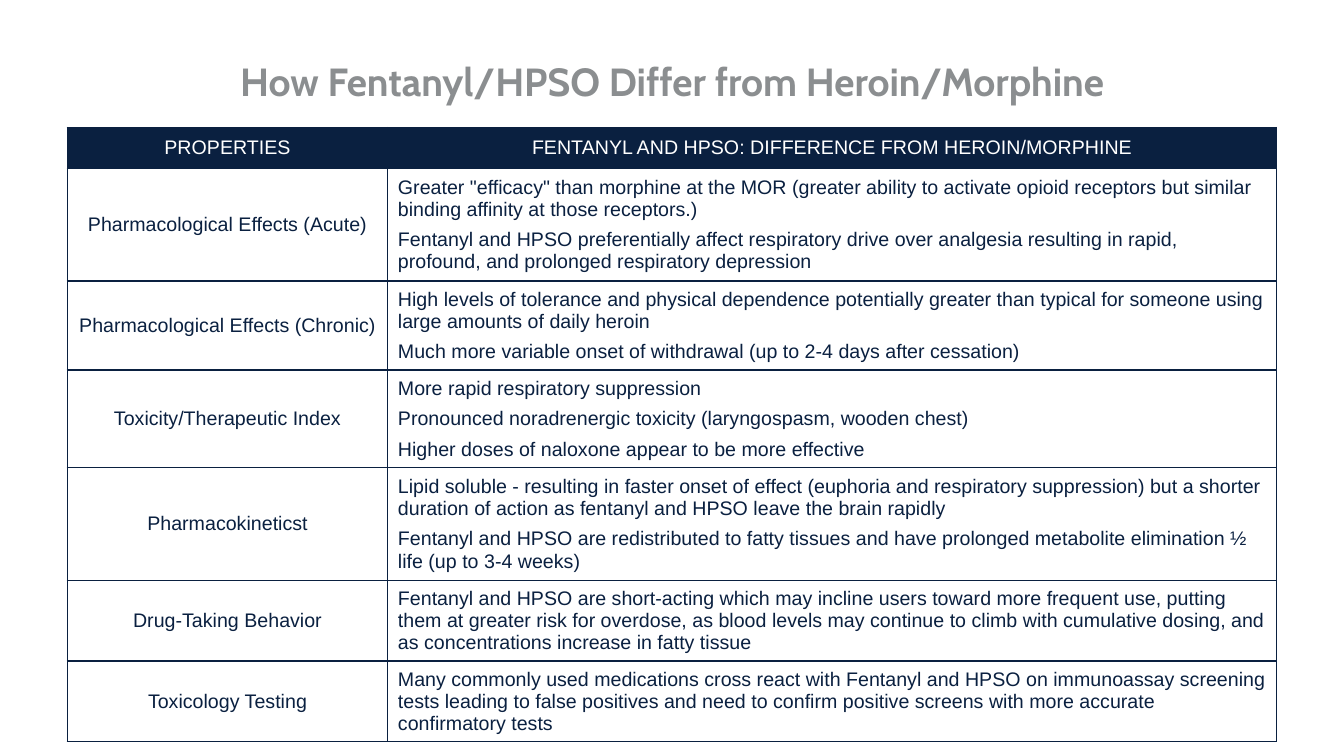
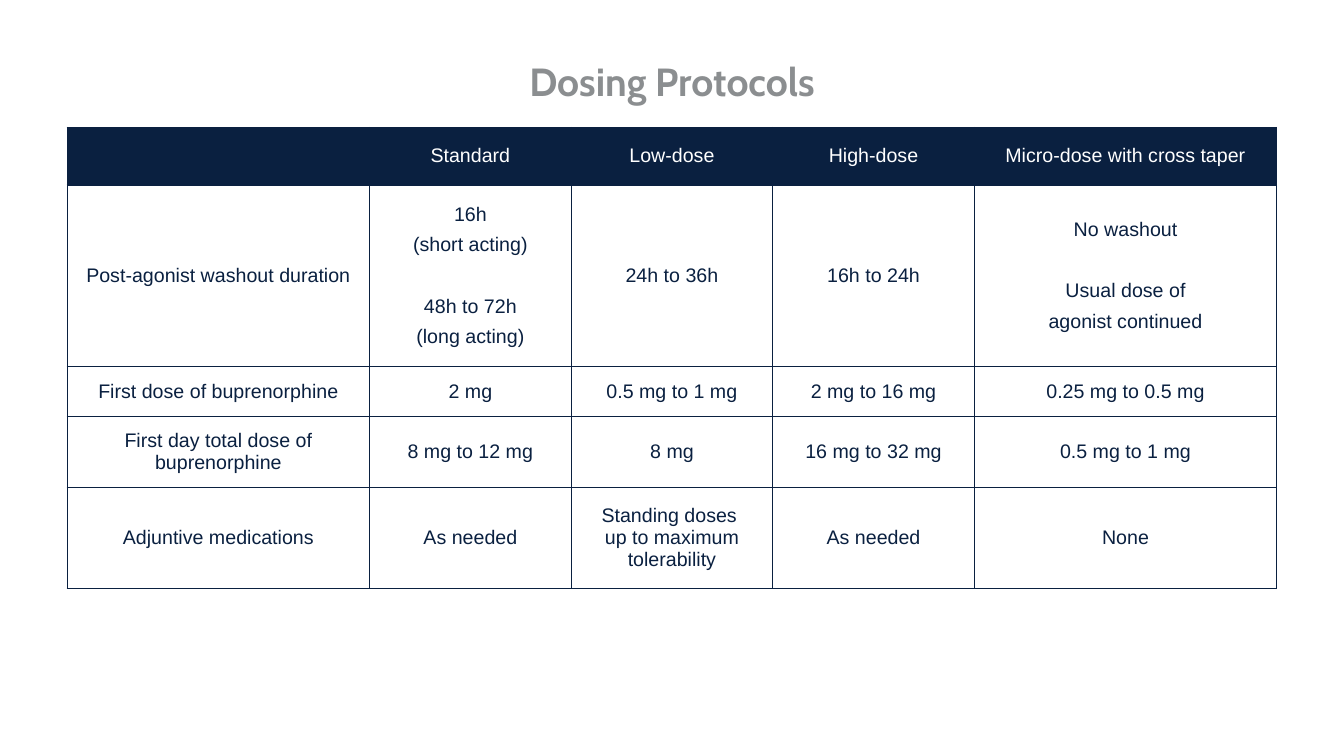
"""Build two table slides on opioid properties and buprenorphine dosing."""
import copy
from dataclasses import dataclass

import lxml.etree
import pptx
import pptx.dml.color
import pptx.enum.text
import pptx.oxml.ns
import pptx.presentation
import pptx.slide
import pptx.table
import pptx.text.text
import pptx.util

Cm = pptx.util.Cm
Pt = pptx.util.Pt
RGB = pptx.dml.color.RGBColor
Align = pptx.enum.text.PP_ALIGN
Anchor = pptx.enum.text.MSO_ANCHOR
qn = pptx.oxml.ns.qn


@dataclass(frozen=True)
class Theme:
    navy: str = "0A2040"
    white: str = "FFFFFF"
    gray: str = "8B8E90"
    head: str = "Cabin"
    body: str = "Arial"
    large: float = 28
    small: float = 14
    after: float = 6
    gap: float = 22
    rule: float = 1


@dataclass(frozen=True)
class Row:
    cells: tuple[str, ...]
    height: float = 1.03


@dataclass(frozen=True)
class Page:
    title: str
    widths: tuple[float, ...]
    tall: float
    align: Align
    rows: tuple[Row, ...]


THEME = Theme()
WIDTH, HEIGHT = 33.87, 19.05
TOP = 3.21

PAGES = (
    Page("How Fentanyl/HPSO Differ from Heroin/Morphine", (8.08, 22.4), 15.47, Align.LEFT, (
        Row(("PROPERTIES", "FENTANYL AND HPSO: DIFFERENCE FROM HEROIN/MORPHINE")),
        Row((
            "Pharmacological Effects (Acute)",
            "Greater \"efficacy\" than morphine at the MOR (greater ability to activate opioid "
            "receptors but similar binding affinity at those receptors.)\n"
            "Fentanyl and HPSO preferentially affect respiratory drive over analgesia resulting "
            "in rapid, profound, and prolonged respiratory depression")),
        Row((
            "Pharmacological Effects (Chronic)",
            "High levels of tolerance and physical dependence potentially greater than typical "
            "for someone using large amounts of daily heroin\n"
            "Much more variable onset of withdrawal (up to 2-4 days after cessation)")),
        Row((
            "Toxicity/Therapeutic Index",
            "More rapid respiratory suppression\n"
            "Pronounced noradrenergic toxicity (laryngospasm, wooden chest)\n"
            "Higher doses of naloxone appear to be more effective")),
        Row((
            "Pharmacokineticst",
            "Lipid soluble - resulting in faster onset of effect (euphoria and respiratory "
            "suppression) but a shorter duration of action as fentanyl and HPSO leave the "
            "brain rapidly\n"
            "Fentanyl and HPSO are redistributed to fatty tissues and have prolonged metabolite "
            "elimination ½ life (up to 3-4 weeks)")),
        Row((
            "Drug-Taking Behavior",
            "Fentanyl and HPSO are short-acting which may incline users toward more frequent "
            "use, putting them at greater risk for overdose, as blood levels may continue to "
            "climb with cumulative dosing, and as concentrations increase in fatty tissue")),
        Row((
            "Toxicology Testing",
            "Many commonly used medications cross react with Fentanyl and HPSO on immunoassay "
            "screening tests leading to false positives and need to confirm positive screens "
            "with more accurate confirmatory tests")),
    )),
    Page("Dosing Protocols", (7.62, 5.08, 5.08, 5.08, 7.62), 11.61, Align.CENTER, (
        Row(("", "Standard", "Low-dose", "High-dose", "Micro-dose with cross taper"), 1.45),
        Row((
            "Post-agonist washout duration",
            "16h\n(short acting)\n\n48h to 72h\n(long acting)",
            "24h to 36h", "16h to 24h",
            "No washout\n\nUsual dose of\nagonist continued"), 4.57),
        Row(("First dose of buprenorphine", "2 mg", "0.5 mg to 1 mg",
             "2 mg to 16 mg", "0.25 mg to 0.5 mg"), 1.27),
        Row(("First day total dose of buprenorphine", "8 mg to 12 mg", "8 mg",
             "16 mg to 32 mg", "0.5 mg to 1 mg"), 1.78),
        Row(("Adjuntive medications", "As needed",
             "Standing doses \vup to maximum tolerability", "As needed", "None"), 2.54),
    )),
)


def write(frame: pptx.text.text.TextFrame, text: str, *, font: str, size: float,
          color: str, align: Align, bold: bool = False, after: float = 0,
          lead: float = 1) -> None:
    """Fill a frame; one newline starts a paragraph, two add a gap."""
    lines = [(line, THEME.gap if part and not spot else 0)
             for part, group in enumerate(text.split("\n\n"))
             for spot, line in enumerate(group.split("\n"))]
    for place, (line, before) in enumerate(lines):
        para = frame.add_paragraph() if place else frame.paragraphs[0]
        para.text = line
        para.alignment = align
        para.line_spacing = lead
        para.space_before, para.space_after = Pt(before), Pt(after)
        for run in para.runs:
            run.font.name, run.font.size, run.font.bold = font, Pt(size), bold
            run.font.color.rgb = RGB.from_string(color)
        for rest in para._p.findall(qn("a:br")):
            rest.insert(0, copy.deepcopy(para.runs[0]._r.rPr))


def edge(cell: pptx.table._Cell) -> None:
    """Draw a thin navy line on all four sides of a cell."""
    props = cell._tc.get_or_add_tcPr()
    for side in ("lnL", "lnR", "lnT", "lnB"):
        line = lxml.etree.SubElement(props, qn(f"a:{side}"), w=str(Pt(THEME.rule)))
        fill = lxml.etree.SubElement(line, qn("a:solidFill"))
        lxml.etree.SubElement(fill, qn("a:srgbClr"), val=THEME.navy)


def title(slide: pptx.slide.Slide, text: str) -> None:
    """Add the centred slide title."""
    frame = slide.shapes.add_textbox(Cm(2.33), Cm(1), Cm(29.21), Cm(2.21)).text_frame
    frame.word_wrap = True
    frame.vertical_anchor = Anchor.MIDDLE
    write(frame, text, font=THEME.head, size=THEME.large, color=THEME.gray,
          align=Align.CENTER, bold=True, lead=0.9)


def grid(slide: pptx.slide.Slide, page: Page) -> None:
    """Add the page's table, centred across the slide."""
    wide = sum(page.widths)
    shape = slide.shapes.add_table(len(page.rows), len(page.widths), Cm((WIDTH - wide) / 2),
                                   Cm(TOP), Cm(wide), Cm(page.tall))
    table = shape.table
    table.first_row = table.horz_banding = False
    for col, width in zip(table.columns, page.widths):
        col.width = Cm(width)
    for down, row in enumerate(page.rows):
        table.rows[down].height = Cm(row.height)
        for over, text in enumerate(row.cells):
            cell = table.cell(down, over)
            edge(cell)
            cell.fill.solid()
            cell.fill.fore_color.rgb = RGB.from_string(THEME.white if down else THEME.navy)
            cell.vertical_anchor = Anchor.MIDDLE
            write(cell.text_frame, text, font=THEME.body, size=THEME.small,
                  color=THEME.navy if down else THEME.white,
                  align=page.align if down and over else Align.CENTER,
                  after=THEME.after if over else 0)
    shape.height = Cm(page.tall)


def main() -> None:
    """Build and save the deck."""
    deck = pptx.Presentation()
    deck.slide_width, deck.slide_height = Cm(WIDTH), Cm(HEIGHT)
    for page in PAGES:
        slide = deck.slides.add_slide(deck.slide_layouts[6])
        title(slide, page.title)
        grid(slide, page)
    deck.save("out.pptx")


if __name__ == "__main__":
    main()
